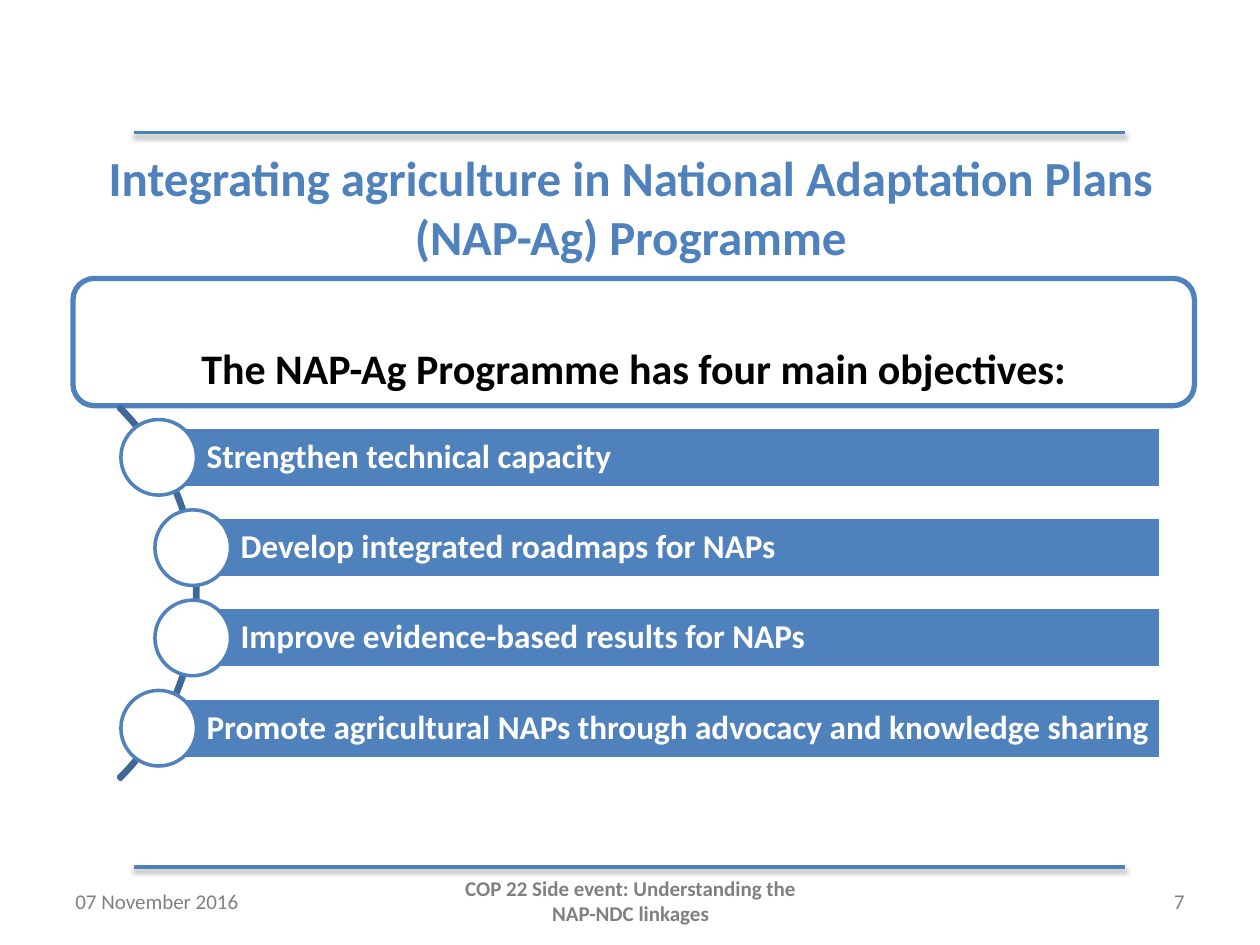
from lxml import etree
from pptx import Presentation
from pptx.dml.color import RGBColor
from pptx.enum.shapes import MSO_CONNECTOR, MSO_SHAPE
from pptx.enum.text import MSO_ANCHOR, PP_ALIGN
from pptx.oxml.ns import qn
from pptx.util import Inches, Pt

STRAIGHT = MSO_CONNECTOR.STRAIGHT
RECTANGLE = MSO_SHAPE.RECTANGLE
ROUNDED = MSO_SHAPE.ROUNDED_RECTANGLE
ARC = MSO_SHAPE.BLOCK_ARC
OVAL = MSO_SHAPE.OVAL
MIDDLE = MSO_ANCHOR.MIDDLE
LEFT, CENTER, RIGHT = PP_ALIGN.LEFT, PP_ALIGN.CENTER, PP_ALIGN.RIGHT

COLORS = {
    "blue": "4F81BD",
    "arc": "3F6797",
    "white": "FFFFFF",
    "black": "000000",
    "gray": "808080",
    "number": "7F7F7F",
}
OBJECTIVES = [
    ("Strengthen technical capacity", 1.26),
    ("Develop integrated roadmaps for NAPs", 1.53),
    ("Improve evidence-based results for NAPs", 1.53),
    ("Promote agricultural NAPs through advocacy and knowledge sharing", 1.26),
]
BAR_TOP, BAR_RIGHT, BAR_HEIGHT = 3.39, 9.21, 0.48
BAR_PITCH = 2.15 / 3
CIRCLE = 0.6


def color(name):
    return RGBColor.from_string(COLORS[name])


def write(shape, text, size=12, ink="gray", bold=False, align=LEFT,
          spacing=None, insets=(0.1, 0.05, 0.1, 0.05)):
    frame = shape.text_frame
    frame.word_wrap = True
    frame.vertical_anchor = MIDDLE
    frame.margin_left, frame.margin_top, frame.margin_right, frame.margin_bottom = map(Inches, insets)
    para = frame.paragraphs[0]
    para.alignment = align
    if spacing:
        para.line_spacing = spacing
    span = para.add_run()
    span.text = text
    span.font.name = "Calibri"
    span.font.size = Pt(size)
    span.font.bold = bold
    span.font.color.rgb = color(ink)


def add_label(page, text, left, top, width, height, **style):
    box = page.shapes.add_textbox(Inches(left), Inches(top), Inches(width), Inches(height))
    write(box, text, **style)


def add_outlined(page, kind, left, top, width, height, line, weight=2, fill=None):
    shape = page.shapes.add_shape(kind, Inches(left), Inches(top), Inches(width), Inches(height))
    shape.shadow.inherit = False
    if fill:
        shape.fill.solid()
        shape.fill.fore_color.rgb = color(fill)
    else:
        shape.fill.background()
    shape.line.color.rgb = color(line)
    shape.line.width = Pt(weight)
    return shape


def add_rule(page, top):
    rule = page.shapes.add_connector(STRAIGHT, Inches(1.06), Inches(top), Inches(8.93), Inches(top))
    rule.line.color.rgb = color("blue")
    rule.line.width = Pt(2)
    effects = etree.SubElement(rule._element.spPr, qn("a:effectLst"))
    shadow = etree.SubElement(effects, qn("a:outerShdw"), blurRad=str(Pt(3.1)),
                              dist=str(Pt(1.6)), dir="5400000", rotWithShape="0")
    tint = etree.SubElement(shadow, qn("a:srgbClr"), val=COLORS["black"])
    etree.SubElement(tint, qn("a:alpha"), val="38000")


def add_objective(page, text, left, top):
    bar = add_outlined(page, RECTANGLE, left, top, BAR_RIGHT - left, BAR_HEIGHT, "white", fill="blue")
    write(bar, text, size=19, ink="white", bold=True, spacing=0.9, insets=(0.38, 0.05, 0.05, 0.05))
    add_outlined(page, OVAL, left - CIRCLE / 2, top + (BAR_HEIGHT - CIRCLE) / 2,
                 CIRCLE, CIRCLE, "blue", fill="white")


def main():
    deck = Presentation()
    deck.slide_width, deck.slide_height = Inches(10), Inches(7.5)
    page = deck.slides.add_slide(deck.slide_layouts[6])

    for top in (1.05, 6.88):
        add_rule(page, top)
    add_label(page, "Integrating agriculture in National Adaptation Plans (NAP-Ag) Programme",
              0.5, 1.23, 9.01, 0.81, size=28, ink="blue", bold=True, align=CENTER)
    add_label(page, "COP 22 Side event: Understanding the NAP-NDC linkages",
              3.42, 6.95, 3.17, 0.4, bold=True, align=CENTER)
    add_label(page, "7", 7.17, 6.95, 2.33, 0.4, ink="number", align=RIGHT)
    add_label(page, "07 November 2016", 0.5, 6.95, 2.33, 0.4)

    heading = add_outlined(page, ROUNDED, 0.58, 2.21, 8.9, 1.01, "blue", weight=3)
    write(heading, "The NAP-Ag Programme has four main objectives:",
          size=24, ink="black", bold=True, align=CENTER, spacing=2.0)

    arc = add_outlined(page, ARC, -2.62, 2.61, 4.19, 4.19, "arc")
    for index, value in enumerate((189, 27, 0.006)):
        arc.adjustments[index] = value
    for index, (text, left) in enumerate(OBJECTIVES):
        add_objective(page, text, left, BAR_TOP + index * BAR_PITCH)

    deck.save("out.pptx")


if __name__ == "__main__":
    main()
